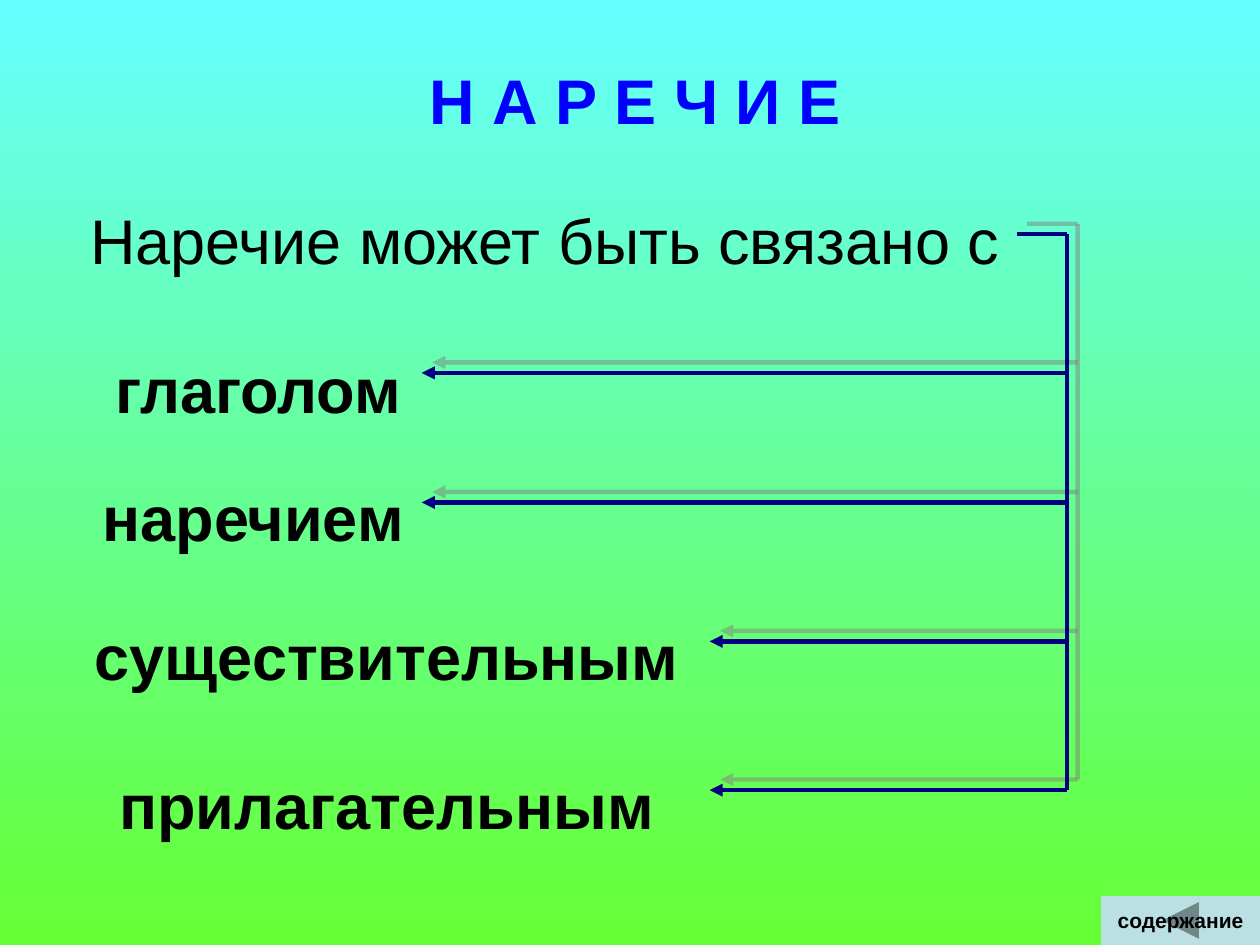
import pptx
import pptx.util
import pptx.dml.color
import pptx.enum.shapes
import pptx.enum.text
import pptx.oxml
import pptx.oxml.ns
from lxml import etree

Pt = pptx.util.Pt
Color = pptx.dml.color.RGBColor.from_string
Align = pptx.enum.text.PP_ALIGN
Anchor = pptx.enum.text.MSO_ANCHOR
Shapes = pptx.enum.shapes.MSO_SHAPE

THEME = {
    "font": "Arial", "large": 36, "small": 12, "line": 2.5,
    "top": "66FFFF", "bottom": "66FF33", "title": "0000FF",
    "text": "000000", "arrow": "000080", "shadow": "808080", "button": "BBE0E3",
}

# Boxes are left, top, width, height in points.
TITLE = ("Н А Р Е Ч И Е", (88, 31.7, 550, 79))
LEAD = ("Наречие может быть связано с", (42.5, 111.6, 538, 50.4))
# Word, box, arrow height, arrow tip
BRANCHES = [
    ("глаголом", (59.8, 196.6, 175.7, 34), 213.1, 241),
    ("наречием", (54, 270, 181.4, 45.4), 287.1, 241),
    ("существительным", (48.2, 349.2, 345.6, 51), 366.5, 405.5),
    ("прилагательным", (48.2, 434.2, 345.6, 45.4), 451.5, 405.5),
]
BUTTON = ("содержание", (629.3, 512, 90.7, 28))
TRUNK_X, TRUNK_TOP, TRUNK_START = 609.8, 133.9, 581


def write(box, text, size, color="text", bold=True, anchor=Anchor.TOP):
    frame = box.text_frame
    frame.word_wrap = False
    frame.auto_size = pptx.enum.text.MSO_AUTO_SIZE.NONE
    frame.vertical_anchor = anchor
    para = frame.paragraphs[0]
    para.text = text
    para.alignment = Align.CENTER
    para.font.name = THEME["font"]
    para.font.size = Pt(THEME[size])
    para.font.bold = bold
    para.font.color.rgb = Color(THEME[color])


def add_label(page, text, place, bold=True):
    box = page.shapes.add_textbox(*map(Pt, place))
    write(box, text, "large", bold=bold)


def add_line(page, start, end, arrow=False):
    """Draw a line with a half-transparent shadow up and to the right."""
    line = page.shapes.add_connector(
        pptx.enum.shapes.MSO_CONNECTOR.STRAIGHT, *map(Pt, start + end))
    line.line.width = Pt(THEME["line"])
    line.line.color.rgb = Color(THEME["arrow"])
    if arrow:
        outline = line.line._get_or_add_ln()
        etree.SubElement(outline, pptx.oxml.ns.qn("a:tailEnd"), type="triangle")
    line._element.spPr.append(pptx.oxml.parse_xml(
        f'<a:effectLst {pptx.oxml.ns.nsdecls("a")}>'
        f'<a:outerShdw dist="{Pt(8.5)}" dir="18900000" algn="ctr" rotWithShape="0">'
        f'<a:srgbClr val="{THEME["shadow"]}"><a:alpha val="50000"/></a:srgbClr>'
        '</a:outerShdw></a:effectLst>'))


def paint_background(page):
    fill = page.background.fill
    fill.gradient()
    fill.gradient_angle = 270
    for stop, position, name in zip(fill.gradient_stops, (0, 1), ("top", "bottom")):
        stop.position = position
        stop.color.rgb = Color(THEME[name])


def add_title(page, text, place):
    title = page.shapes.title
    title.left, title.top, title.width, title.height = map(Pt, place)
    write(title, text, "large", "title")


def add_button(page, text, place):
    button = page.shapes.add_shape(
        Shapes.ACTION_BUTTON_BACK_OR_PREVIOUS, *map(Pt, place))
    button.shadow.inherit = False
    button.fill.solid()
    button.fill.fore_color.rgb = Color(THEME["button"])
    button.line.fill.background()
    write(button, text, "small", anchor=Anchor.MIDDLE)


def main():
    deck = pptx.Presentation()
    deck.slide_width, deck.slide_height = Pt(720), Pt(540)
    page = deck.slides.add_slide(deck.slide_layouts[5])
    paint_background(page)
    add_title(page, *TITLE)
    add_label(page, *LEAD, bold=False)
    for word, place, _, _ in BRANCHES:
        add_label(page, word, place)

    above = TRUNK_TOP
    for _, _, level, tip in BRANCHES:
        add_line(page, (TRUNK_X, level), (tip, level), arrow=True)
        add_line(page, (TRUNK_X, above), (TRUNK_X, level))
        above = level
    add_button(page, *BUTTON)
    add_line(page, (TRUNK_START, TRUNK_TOP), (TRUNK_X, TRUNK_TOP))
    deck.save("out.pptx")


if __name__ == "__main__":
    main()
